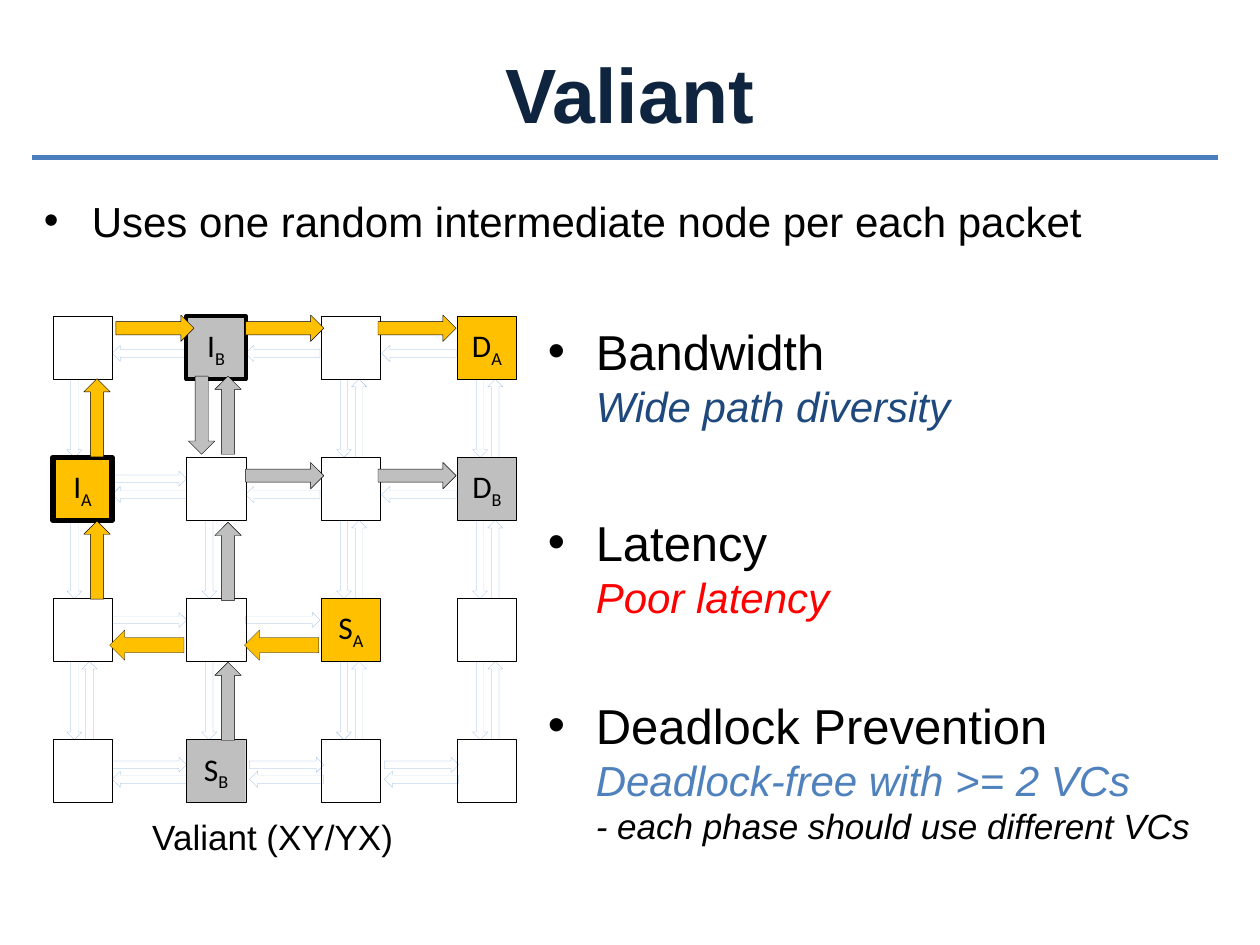
"""Build a slide on Valiant routing with a mesh diagram and its properties."""
import pptx
import pptx.dml.color
import pptx.enum.shapes
import pptx.enum.text
import pptx.oxml
import pptx.oxml.ns
import pptx.util

Inches = pptx.util.Inches
Pt = pptx.util.Pt
Shape = pptx.enum.shapes.MSO_SHAPE
Align = pptx.enum.text.PP_ALIGN
Anchor = pptx.enum.text.MSO_ANCHOR
color = pptx.dml.color.RGBColor.from_string
DRAWING = pptx.oxml.ns.nsdecls("a")
GOLD, GRAY, BLACK, PALE_BLUE = "FFC000", "BFBFBF", "000000", "8EB4E3"


def add_text(paragraph, text, size, fill=BLACK, font="Arial", bold=False, italic=False, subscript=False):
    run = paragraph.add_run()
    run.text = text
    run.font.name = font
    run.font.size = Pt(size)
    run.font.bold = bold
    run.font.italic = italic
    run.font.color.rgb = color(fill)
    if subscript:
        run.font._element.set("baseline", "-25000")


def add_block(kind, left, top, width, height, fill=None, line=BLACK, weight=0.1, rotation=0):
    shape = slide.shapes.add_shape(kind, Inches(left), Inches(top), Inches(width), Inches(height))
    shape.shadow.inherit = False
    shape.rotation = rotation
    if fill:
        shape.fill.solid()
        shape.fill.fore_color.rgb = color(fill)
    else:
        shape.fill.background()
    shape.line.color.rgb = color(line)
    shape.line.width = Pt(weight)
    return shape


presentation = pptx.Presentation()
presentation.slide_width = Inches(10)
presentation.slide_height = Inches(7.5)
slide = presentation.slides.add_slide(presentation.slide_layouts[6])

for text, left, top, width, height, size, fill, bold, anchor, space in [
    ("Valiant", 0.5, 0.3, 9, 0.87, 44, "0F243E", True, Anchor.MIDDLE, 0),
    ("Valiant (XY/YX)", 0.25, 6.42, 3.83, 0.83, 20, BLACK, False, Anchor.TOP, 2),
]:
    box = slide.shapes.add_textbox(Inches(left), Inches(top), Inches(width), Inches(height))
    box.text_frame.word_wrap = True
    box.text_frame.vertical_anchor = anchor
    paragraph = box.text_frame.paragraphs[0]
    paragraph.alignment = Align.CENTER
    paragraph.space_before = Pt(space)
    add_text(paragraph, text, size, fill, bold=bold)

rule = slide.shapes.add_connector(
    pptx.enum.shapes.MSO_CONNECTOR.STRAIGHT, Inches(0.25), Inches(1.25), Inches(9.67), Inches(1.25))
rule.line.color.rgb = color("4B7EBC")
rule.line.width = Pt(3)
rule._element.spPr.append(pptx.oxml.parse_xml(f"<a:effectLst {DRAWING}/>"))

introduction = [(3, [("Uses one random intermediate node per each packet", 24, BLACK, False)])]
properties = [
    (4, [("Bandwidth", 28, BLACK, False), ("Wide path diversity", 24, "1F497D", True)]),
    (47, [("Latency", 28, BLACK, False), ("Poor latency", 24, "FF0000", True)]),
    (42, [("Deadlock Prevention", 28, BLACK, False),
          ("Deadlock-free with >= 2 VCs", 24, "4F81BD", True),
          ("- each phase should use different VCs", 20, BLACK, True)]),
]
for left, top, width, height, bullets in [
    (0.25, 1.5, 9.42, 0.83, introduction),
    (4.25, 2.5, 5.75, 4, properties),
]:
    box = slide.shapes.add_textbox(Inches(left), Inches(top), Inches(width), Inches(height))
    box.text_frame.word_wrap = True
    for index, (space, lines) in enumerate(bullets):
        paragraph = box.text_frame.add_paragraph() if index else box.text_frame.paragraphs[0]
        paragraph.space_before = Pt(space)
        settings = paragraph._element.get_or_add_pPr()
        settings.set("marL", str(Inches(0.38)))
        settings.set("indent", str(Inches(-0.38)))
        settings.append(pptx.oxml.parse_xml(f'<a:buFont {DRAWING} typeface="Arial"/>'))
        settings.append(pptx.oxml.parse_xml(f'<a:buChar {DRAWING} char="•"/>'))
        for number, (text, size, fill, italic) in enumerate(lines):
            if number:
                paragraph.add_line_break()
            add_text(paragraph, text, size, fill, italic=italic)

link_lefts = [0.28, 1.35, 2.42, 3.5]
for row in range(3):
    for column, left in enumerate(link_lefts):
        top = 3.26 + 1.12 * row
        if (column, row) != (1, 0):
            add_block(Shape.RIGHT_ARROW, left, top, 0.62, 0.12, line=PALE_BLUE, rotation=90)
        if column >= 2 or (column, row) == (0, 2):
            add_block(Shape.LEFT_ARROW, left + 0.12, top, 0.62, 0.12, line=PALE_BLUE, rotation=90)

upper_lefts, bottom_lefts = [0.89, 1.95, 3.03], [0.89, 1.98, 3.05]
for kind, top, height, lefts in [
    (Shape.LEFT_ARROW, 2.74, 0.13, upper_lefts),
    (Shape.LEFT_ARROW, 3.86, 0.13, upper_lefts),
    (Shape.LEFT_ARROW, 6.12, 0.13, bottom_lefts),
    (Shape.RIGHT_ARROW, 3.74, 0.12, upper_lefts[:1]),
    (Shape.RIGHT_ARROW, 4.86, 0.12, upper_lefts[:2]),
    (Shape.RIGHT_ARROW, 6.01, 0.12, bottom_lefts),
]:
    for left in lefts:
        add_block(kind, left, top, 0.59, height, line=PALE_BLUE)

labelled_nodes = {
    (1, 0): ("I", "B", GRAY, 2.25),
    (3, 0): ("D", "A", GOLD, 0.1),
    (0, 1): ("I", "A", GOLD, 3),
    (3, 1): ("D", "B", GRAY, 0.1),
    (2, 2): ("S", "A", GOLD, 0.1),
    (1, 3): ("S", "B", GRAY, 0.1),
}
for row in range(4):
    for column, left in enumerate([0.42, 1.48, 2.55, 3.63]):
        letter, packet, fill, weight = labelled_nodes.get((column, row), ("", "", None, 0.1))
        node = add_block(Shape.RECTANGLE, left, 2.51 + 1.12 * row, 0.47, 0.5, fill, weight=weight)
        if letter:
            frame = node.text_frame
            frame.margin_left = frame.margin_right = frame.margin_top = frame.margin_bottom = 0
            frame.word_wrap = False
            frame.vertical_anchor = Anchor.MIDDLE
            paragraph = frame.paragraphs[0]
            paragraph.alignment = Align.CENTER
            add_text(paragraph, letter, 18, font="Calibri")
            add_text(paragraph, packet, 18, font="Calibri", subscript=True)

for left in [0.87, 1.94]:
    add_block(Shape.RIGHT_ARROW, left, 5, 0.59, 0.24, GOLD, rotation=180)

for fill, rotation, positions in [
    (GOLD, 270, [(0.46, 4.34), (0.46, 3.21)]),
    (GOLD, 0, [(0.92, 2.5), (1.95, 2.5), (3, 2.5)]),
    (GRAY, 270, [(1.5, 5.46), (1.5, 4.35), (1.5, 3.19)]),
    (GRAY, 90, [(1.29, 3.19)]),
    (GRAY, 0, [(1.95, 3.67), (3, 3.67)]),
]:
    for left, top in positions:
        add_block(Shape.RIGHT_ARROW, left, top, 0.62, 0.21, fill, weight=0.25, rotation=rotation)

presentation.save("out.pptx")
